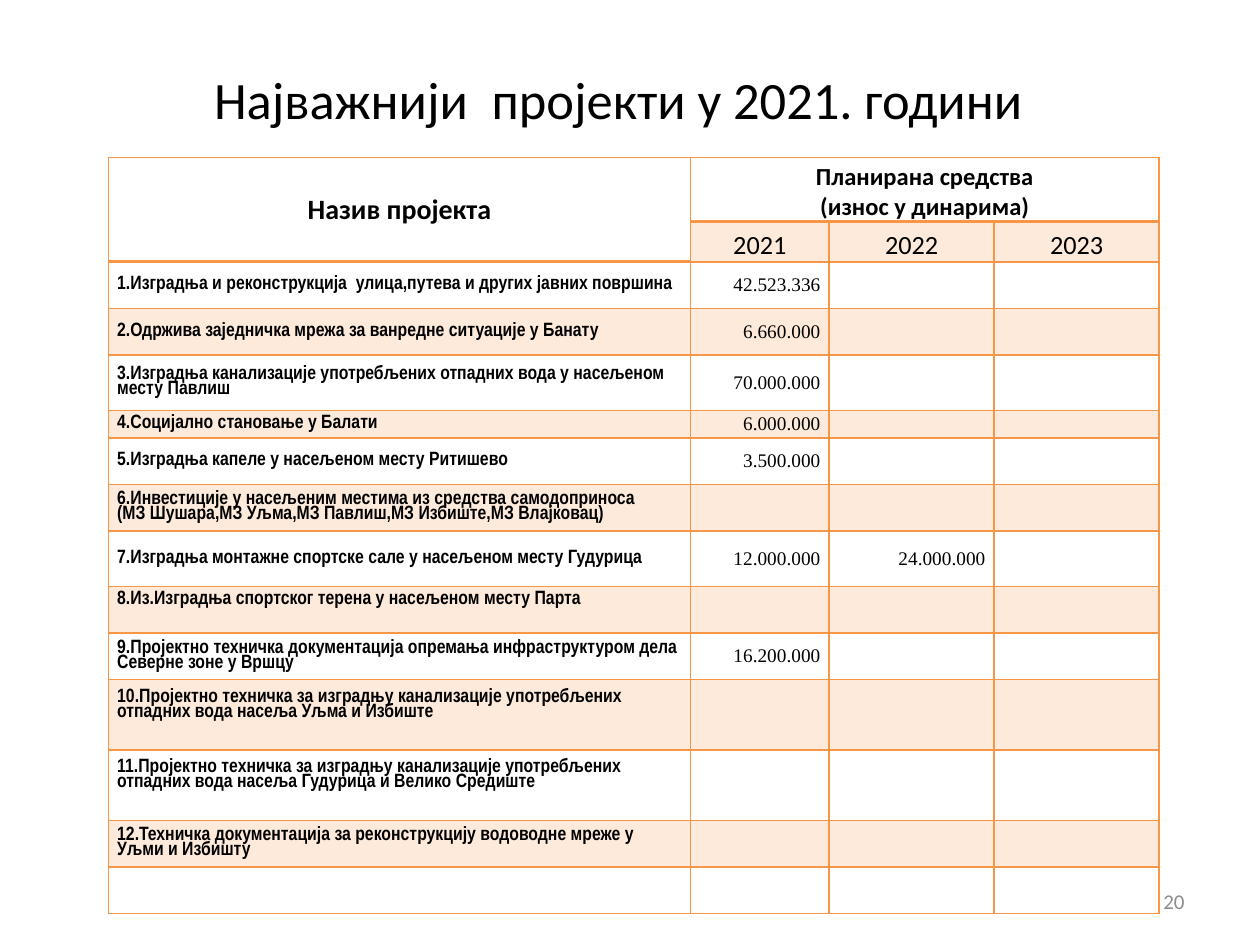
"""Build the slide listing the most important projects of 2021 and their planned funds."""
from dataclasses import dataclass

from lxml.etree import SubElement
from pptx import Presentation
from pptx.dml.color import RGBColor
from pptx.enum.text import MSO_ANCHOR, PP_ALIGN
from pptx.oxml.ns import qn
from pptx.util import Pt

ORANGE = RGBColor(0xF7, 0x96, 0x46)
PEACH = RGBColor(0xFD, 0xEA, 0xDA)
BLACK = RGBColor(0x00, 0x00, 0x00)
GREY = RGBColor(0x8C, 0x8C, 0x8C)

COLUMN_WIDTHS = (332.6, 79.2, 94.3, 94.3)
HEADER_HEIGHTS = (36.7, 23)
YEARS = ("2021", "2022", "2023")


@dataclass(frozen=True)
class Project:
    """One project row with its planned amounts by year."""
    name: str = ""
    amounts: tuple = ("", "", "")
    height: float = 26.6
    bottom: float = 0


PROJECTS = (
    Project("1.Изградња и реконструкција  улица,путева и других јавних површина", ("42.523.336", "", "")),
    Project("2.Одржива заједничка мрежа за ванредне ситуације у Банату", ("6.660.000", "", "")),
    Project("3.Изградња канализације употребљених отпадних вода у насељеном месту Павлиш",
            ("70.000.000", "", ""), 31.7),
    Project("4.Социјално становање у Балати", ("6.000.000", "", ""), 15.8),
    Project("5.Изградња капеле у насељеном месту Ритишево", ("3.500.000", "", "")),
    Project("6.Инвестиције у насељеним местима из средства самодоприноса\n"
            "(МЗ Шушара,МЗ Уљма,МЗ Павлиш,МЗ Избиште,МЗ Влајковац)"),
    Project("7.Изградња монтажне спортске сале у насељеном месту Гудурица",
            ("12.000.000", "24.000.000", ""), 31.7),
    Project("8.Из.Изградња спортског терена у насељеном месту Парта", bottom=11),
    Project("9.Пројектно техничка документација опремања инфраструктуром дела Северне зоне у Вршцу",
            ("16.200.000", "", "")),
    Project("10.Пројектно техничка за изградњу канализације употребљених отпадних вода насеља Уљма и Избиште",
            height=40.3, bottom=11),
    Project("11.Пројектно техничка за изградњу канализације употребљених отпадних вода насеља "
            "Гудурица и Велико Средиште", height=40.3, bottom=11),
    Project("12.Техничка документација за реконструкцију водоводне мреже у Уљми и Избишту"),
    Project(),
)


def write(tf, text: str, *, size: float = 11, font: str = "Calibri", bold: bool = False,
          color: RGBColor = BLACK, align=PP_ALIGN.LEFT, spacing: float = 1.0) -> None:
    """Fill a text frame with uniformly formatted text."""
    tf.text = text
    for p in tf.paragraphs:
        p.alignment = align
        p.line_spacing = spacing
        for r in p.runs:
            r.font.size = Pt(size)
            r.font.name = font
            r.font.bold = bold
            r.font.color.rgb = color
        if not p.runs:
            SubElement(p._p, qn("a:endParaRPr"), sz=str(int(size * 100)))


def add_text(s, box: tuple, text: str, *, right: float = 7.2, **fmt) -> None:
    """Add a vertically centred text box."""
    tf = s.shapes.add_textbox(*map(Pt, box)).text_frame
    tf.word_wrap = True
    tf.vertical_anchor = MSO_ANCHOR.MIDDLE
    tf.margin_right = Pt(right)
    write(tf, text, **fmt)


def style_cell(cell, *, shaded: bool = False, top: float = 1, under: float = 1,
               anchor=MSO_ANCHOR.MIDDLE, bottom: float = 0) -> None:
    """Set the borders, fill, margins and anchor of a table cell."""
    tc_pr = cell._tc.get_or_add_tcPr()
    for side, width in (("L", 1), ("R", 1), ("T", top), ("B", under)):
        ln = SubElement(tc_pr, qn(f"a:ln{side}"), w=str(Pt(width)))
        SubElement(SubElement(ln, qn("a:solidFill")), qn("a:srgbClr"), val=str(ORANGE))
    if shaded:
        cell.fill.solid()
        cell.fill.fore_color.rgb = PEACH
    else:
        cell.fill.background()
    cell.margin_left = cell.margin_right = Pt(5)
    cell.margin_top = 0
    cell.margin_bottom = Pt(bottom)
    cell.vertical_anchor = anchor


def add_header(table) -> None:
    """Write the two merged header rows."""
    for col in range(len(COLUMN_WIDTHS)):
        style_cell(table.cell(0, col), under=2, anchor=MSO_ANCHOR.BOTTOM if col else MSO_ANCHOR.MIDDLE)
        style_cell(table.cell(1, col), shaded=col > 0, top=2, under=1 if col else 2,
                   anchor=MSO_ANCHOR.BOTTOM)
    table.cell(0, 0).merge(table.cell(1, 0))
    table.cell(0, 1).merge(table.cell(0, 3))
    write(table.cell(0, 0).text_frame, "Назив пројекта", size=16, bold=True, align=PP_ALIGN.CENTER)
    write(table.cell(0, 1).text_frame, "Планирана средства\n(износ у динарима)",
          size=14, bold=True, align=PP_ALIGN.CENTER)
    for col, year in enumerate(YEARS, 1):
        write(table.cell(1, col).text_frame, year, size=15, align=PP_ALIGN.CENTER)


def add_project(table, row: int, project: Project) -> None:
    """Write one project row, shading every second one."""
    for col, text in enumerate((project.name, *project.amounts)):
        cell = table.cell(row, col)
        style_cell(cell, shaded=row % 2 == 1, top=2 if row == 2 and col == 0 else 1,
                   bottom=0 if col else project.bottom)
        if col:
            write(cell.text_frame, text, font="Times New Roman", align=PP_ALIGN.RIGHT)
        else:
            write(cell.text_frame, text, font="Arial Narrow", bold=True, spacing=0.83)


def add_project_table(s) -> None:
    """Add the table of projects and planned funds."""
    heights = (*HEADER_HEIGHTS, *(project.height for project in PROJECTS))
    table = s.shapes.add_table(len(heights), len(COLUMN_WIDTHS), Pt(62), Pt(90),
                               Pt(sum(COLUMN_WIDTHS)), Pt(sum(heights))).table
    table.first_row = table.horz_banding = False
    for column, width in zip(table.columns, COLUMN_WIDTHS):
        column.width = Pt(width)
    for row, height in zip(table.rows, heights):
        row.height = Pt(height)
    add_header(table)
    for row, project in enumerate(PROJECTS, len(HEADER_HEIGHTS)):
        add_project(table, row, project)


def main() -> None:
    """Build and save the presentation."""
    prs = Presentation()
    prs.slide_width, prs.slide_height = Pt(720), Pt(540)
    s = prs.slides.add_slide(prs.slide_layouts[6])
    add_project_table(s)
    add_text(s, (516, 500.4, 168, 28.8), "20", size=12, color=GREY, align=PP_ALIGN.RIGHT)
    add_text(s, (36, 21.6, 648, 69), "Најважнији  пројекти у 2021. години",
             right=20, size=30, align=PP_ALIGN.CENTER)
    prs.save("out.pptx")


if __name__ == "__main__":
    main()
